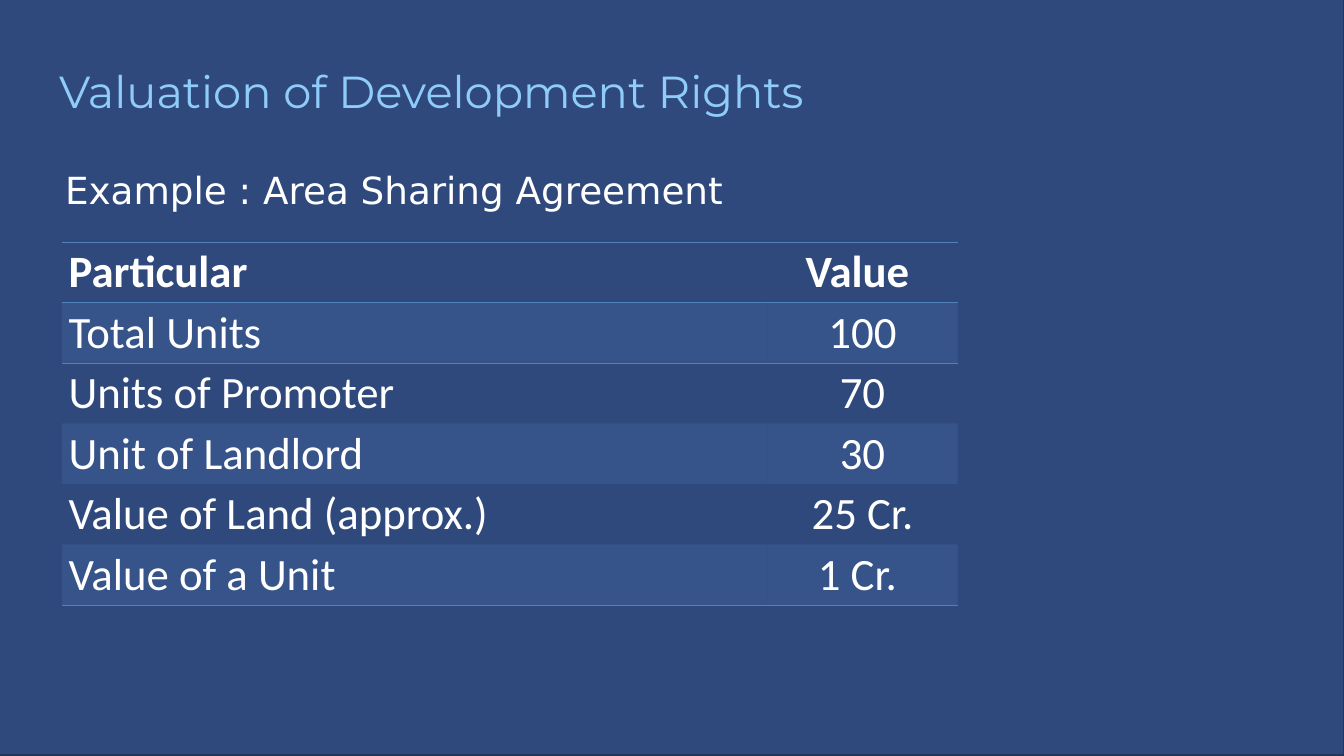
from lxml import etree
from pptx import Presentation
from pptx.dml.color import RGBColor
from pptx.enum.shapes import MSO_SHAPE
from pptx.enum.text import MSO_ANCHOR, MSO_AUTO_SIZE, PP_ALIGN
from pptx.oxml.ns import qn
from pptx.util import Inches, Pt

RECT = MSO_SHAPE.RECTANGLE
LEFT, MID = PP_ALIGN.LEFT, PP_ALIGN.CENTER
TOP = MSO_ANCHOR.TOP
FIXED = MSO_AUTO_SIZE.NONE
PLAIN = "{2D5ABB26-0587-4C30-8999-92F81FD0307C}"

HUE = {"navy": "002060", "edge": "233953", "sky": "90CCFA",
       "white": "FFFFFF", "blue": "4F81BD"}
FORM = {
    "title": {"name": "Montserrat", "size": Pt(48), "bold": False},
    "lead": {"name": "DejaVu Sans", "size": Pt(40), "bold": False},
    "head": {"name": "Calibri", "size": Pt(48), "bold": True},
    "body": {"name": "Calibri", "size": Pt(48), "bold": False},
}
ROWS = [
    ("Particular", "Value "),
    ("Total Units", "100"),
    ("Units of Promoter", "70"),
    ("Unit of Landlord", "30"),
    ("Value of Land (approx.)", " 25 Cr. "),
    ("Value of a Unit", "1 Cr. "),
]


def write(frame, text, form, hue, align=LEFT):
    frame.text = text
    para = frame.paragraphs[0]
    para.alignment = align
    font = para.runs[0].font
    for key, value in FORM[form].items():
        setattr(font, key, value)
    font.color.rgb = RGBColor.from_string(HUE[hue])


def tint(fill, node, hue, share):
    """Fill with a colour that is opaque by the given percentage."""
    fill.solid()
    fill.fore_color.rgb = RGBColor.from_string(HUE[hue])
    clr = node.find(qn("a:solidFill")).find(qn("a:srgbClr"))
    etree.SubElement(clr, qn("a:alpha"), val=str(share * 1000))


deck = Presentation()
deck.slide_width, deck.slide_height = Inches(20), Inches(11.25)
slide = deck.slides.add_slide(deck.slide_layouts[5])
shapes = slide.shapes

# Backdrop, behind the title
back = shapes.add_shape(RECT, Inches(-0.44), Inches(-0.02),
                        Inches(20.44), Inches(11.25))
back.shadow.inherit = False
tint(back.fill, back._element.spPr, "navy", 81)
back.line.color.rgb = RGBColor.from_string(HUE["edge"])
back.line.width = Pt(2)
shapes._spTree.insert(2, back._element)

# Title and lead line
title = shapes.title
title.left, title.top = Inches(0.68), Inches(0.75)
title.width, title.height = Inches(17.05), Inches(2.08)
frame = title.text_frame
for side in ("left", "top", "right", "bottom"):
    setattr(frame, "margin_" + side, Inches(0.2))
frame.vertical_anchor = TOP
frame.auto_size = FIXED
write(frame, "Valuation of Development Rights", "title", "sky")

lead = shapes.add_textbox(Inches(0.87), Inches(2.44), Inches(10.68), Inches(0.77))
lead.text_frame.word_wrap = True
write(lead.text_frame, "Example : Area Sharing Agreement", "lead", "white")

# Table of values
last = len(ROWS) - 1
grid = shapes.add_table(len(ROWS), 2, Inches(0.92), Inches(3.6),
                        Inches(13.33), Inches(0.9 * len(ROWS)))
table = grid.table
table.first_row = table.horz_banding = False
table._tbl.tblPr.find(qn("a:tableStyleId")).text = PLAIN
for col, width in zip(table.columns, (10.5, 2.83)):
    col.width = Inches(width)

for r, row in enumerate(ROWS):
    for c, text in enumerate(row):
        cell = table.cell(r, c)
        write(cell.text_frame, text, "body" if r else "head", "white",
              MID if c else LEFT)
        props = cell._tc.get_or_add_tcPr()
        if r % 2:
            tint(cell.fill, props, "blue", 20)
        else:
            cell.fill.background()
        edges = {0: ("lnB", "lnT"), 1: ("lnT",), last: ("lnB",)}.get(r, ())
        for edge in edges:
            line = etree.Element(qn("a:" + edge), w=str(Pt(1)))
            solid = etree.SubElement(line, qn("a:solidFill"))
            etree.SubElement(solid, qn("a:srgbClr"), val=HUE["blue"])
            props.insert(0, line)

deck.save("out.pptx")
